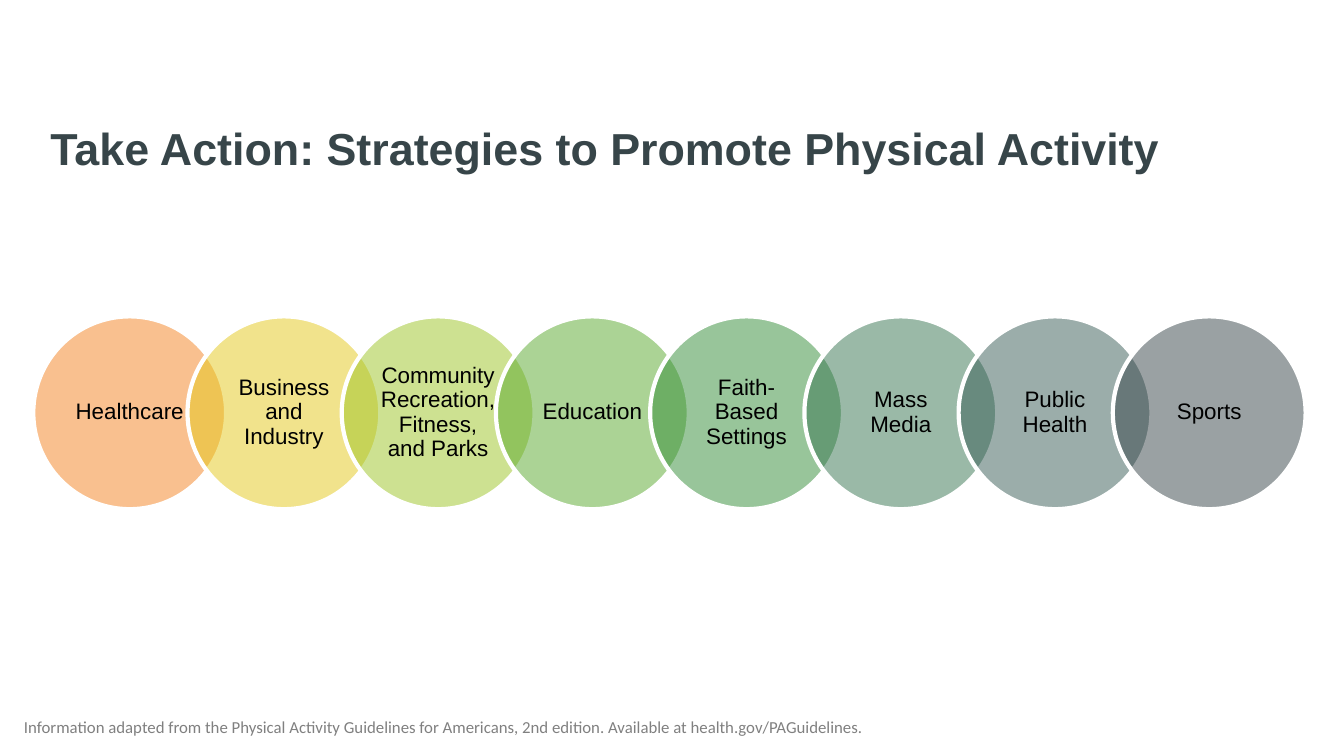
from lxml.etree import SubElement
from pptx import Presentation
from pptx.dml.color import RGBColor
from pptx.enum.shapes import MSO_SHAPE
from pptx.enum.text import MSO_ANCHOR, PP_ALIGN
from pptx.oxml.ns import qn
from pptx.util import Pt

WHITE = RGBColor(0xFF, 0xFF, 0xFF)
BLACK = RGBColor(0x00, 0x00, 0x00)
GRAY = RGBColor(0x80, 0x80, 0x80)
SLATE = RGBColor(0x37, 0x45, 0x49)

SECTORS = [
    ("Healthcare", RGBColor(0xF4, 0x83, 0x20)),
    ("Business and Industry", RGBColor(0xE5, 0xC9, 0x1A)),
    ("Community Recreation, Fitness, and Parks", RGBColor(0x9C, 0xC5, 0x25)),
    ("Education", RGBColor(0x58, 0xA8, 0x2D)),
    ("Faith-Based Settings", RGBColor(0x33, 0x8D, 0x37)),
    ("Mass Media", RGBColor(0x37, 0x74, 0x51)),
    ("Public Health", RGBColor(0x38, 0x5D, 0x57)),
    ("Sports", SLATE),
]
CIRCLE_LEFT = 23.8
CIRCLE_TOP = 226
CIRCLE_SIZE = 137.7
CIRCLE_PITCH = 110.16


def write_text(frame, text, font_name, size, color, alignment, anchor, bold=False):
    frame.word_wrap = True
    frame.vertical_anchor = anchor
    paragraph = frame.paragraphs[0]
    paragraph.alignment = alignment
    run = paragraph.add_run()
    run.text = text
    run.font.name = font_name
    run.font.size = Pt(size)
    run.font.bold = bold
    run.font.color.rgb = color
    return paragraph


def set_margins(frame, horizontal, vertical):
    frame.margin_left = frame.margin_right = Pt(horizontal)
    frame.margin_top = frame.margin_bottom = Pt(vertical)


def set_title(slide, text):
    title = slide.shapes.title
    title.left, title.top = Pt(36), Pt(86.4)
    title.width, title.height = Pt(885.6), Pt(36)
    set_margins(title.text_frame, 0, 0)
    paragraph = write_text(title.text_frame, text, "Arial", 32, SLATE,
                           PP_ALIGN.LEFT, MSO_ANCHOR.TOP, bold=True)
    paragraph.line_spacing = 1.0


def add_sector_circle(slide, index, label, color):
    """Add one half-transparent circle of the overlapping chain."""
    circle = slide.shapes.add_shape(
        MSO_SHAPE.OVAL, Pt(CIRCLE_LEFT + index * CIRCLE_PITCH), Pt(CIRCLE_TOP),
        Pt(CIRCLE_SIZE), Pt(CIRCLE_SIZE))
    circle.shadow.inherit = False
    circle.fill.solid()
    circle.fill.fore_color.rgb = color
    color_element = circle.fill._xPr.find(qn("a:solidFill"))[0]
    SubElement(color_element, qn("a:alpha")).set("val", "50000")
    circle.line.color.rgb = WHITE
    circle.line.width = Pt(3)
    set_margins(circle.text_frame, 7.5, 1.6)
    paragraph = write_text(circle.text_frame, label, "Arial", 16, BLACK,
                           PP_ALIGN.CENTER, MSO_ANCHOR.MIDDLE)
    paragraph.line_spacing = 0.9


def add_source_note(slide, text):
    note = slide.shapes.add_textbox(Pt(10), Pt(479), Pt(788), Pt(51))
    write_text(note.text_frame, text, "Calibri", 12, GRAY,
               PP_ALIGN.LEFT, MSO_ANCHOR.BOTTOM)


def main():
    presentation = Presentation()
    presentation.slide_width, presentation.slide_height = Pt(960), Pt(540)
    slide = presentation.slides.add_slide(presentation.slide_layouts[5])
    add_source_note(slide, "Information adapted from the Physical Activity Guidelines for "
                           "Americans, 2nd edition. Available at health.gov/PAGuidelines.")
    set_title(slide, "Take Action: Strategies to Promote Physical Activity")
    for index, (label, color) in enumerate(SECTORS):
        add_sector_circle(slide, index, label, color)
    presentation.save("out.pptx")


if __name__ == "__main__":
    main()
